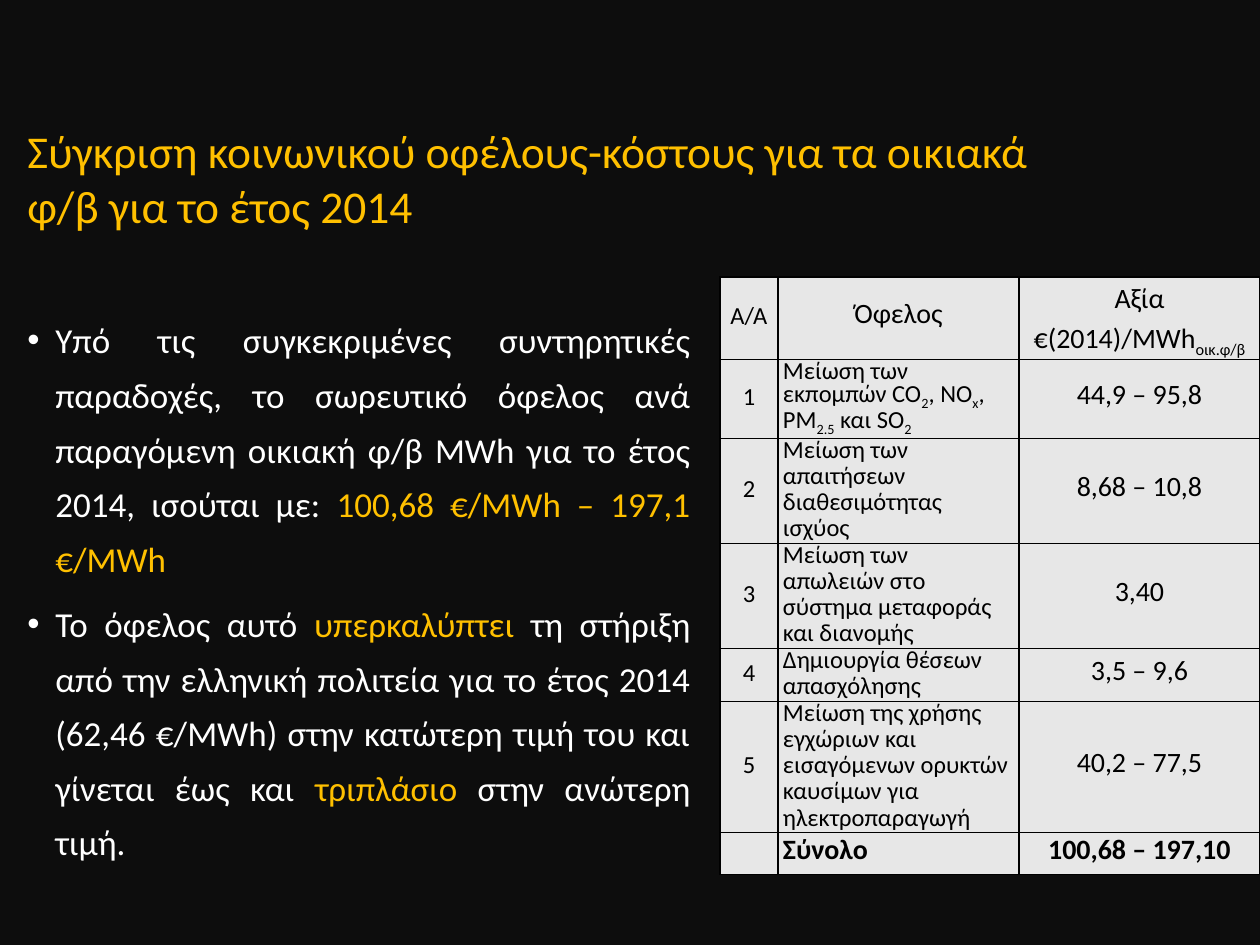
from lxml.etree import SubElement
from pptx import Presentation
from pptx.dml.color import RGBColor
from pptx.enum.text import MSO_ANCHOR, PP_ALIGN
from pptx.oxml.ns import qn
from pptx.util import Inches, Pt

PX = Inches(1) / 126
WHITE, BLACK, GOLD, GREY = "FFFFFF", "000000", "FFC000", "E7E7E7"


def px(count):
    return round(count * PX)


def write(paragraph, text, size, color, accent=None, bold=False, align=PP_ALIGN.LEFT,
          line=1.0, after=0):
    """Every second part between | marks takes the accent colour, or is subscript without one."""
    paragraph.alignment = align
    paragraph.line_spacing = line
    paragraph.space_after = Pt(after)
    for index, part in enumerate(text.split("|")):
        if not part:
            continue
        run = paragraph.add_run()
        run.text = part
        run.font.name = "Calibri"
        run.font.size = Pt(size)
        run.font.bold = bold
        marked = index % 2 == 1
        run.font.color.rgb = RGBColor.from_string(accent if marked and accent else color)
        if marked and not accent:
            run.font._element.set("baseline", "-25000")


presentation = Presentation()
presentation.slide_width, presentation.slide_height = px(1260), px(945)
slide = presentation.slides.add_slide(presentation.slide_layouts[6])
slide.background.fill.solid()
slide.background.fill.fore_color.rgb = RGBColor.from_string("0D0D0D")

title = slide.shapes.add_textbox(px(15), px(117), px(1082), px(123)).text_frame
title.word_wrap = True
write(title.paragraphs[0],
      "Σύγκριση κοινωνικού οφέλους-κόστους για τα οικιακά φ/β για το έτος 2014", 26, GOLD)

# Bulleted conclusions
conclusions = [
    "Υπό τις συγκεκριμένες συντηρητικές παραδοχές, το σωρευτικό όφελος ανά παραγόμενη "
    "οικιακή φ/β MWh για το έτος 2014, ισούται με: |100,68 €/MWh – 197,1 €/MWh|",
    "Το όφελος αυτό |υπερκαλύπτει| τη στήριξη από την ελληνική πολιτεία για το έτος 2014 "
    "(62,46 €/MWh) στην κατώτερη τιμή του και γίνεται έως και |τριπλάσιο| στην ανώτερη τιμή.",
]
body = slide.shapes.add_textbox(px(15), px(300), px(688), px(571)).text_frame
body.word_wrap = True
for index, text in enumerate(conclusions):
    paragraph = body.add_paragraph() if index else body.paragraphs[0]
    write(paragraph, text, 20, WHITE, accent=GOLD, align=PP_ALIGN.JUSTIFY, line=1.3, after=6)
    properties = paragraph._p.get_or_add_pPr()
    properties.set("marL", str(px(28)))
    properties.set("indent", str(-px(28)))
    SubElement(properties, qn("a:buFont"), typeface="Arial")
    SubElement(properties, qn("a:buChar"), char="•")

# Benefits table
rows = [
    ("A/A", "Όφελος", "Αξία\n€(2014)/MWh|οικ.φ/β|"),
    ("1", "Μείωση των εκπομπών CO|2|, NO|x|, PM|2.5| και SO|2|", "44,9 – 95,8"),
    ("2", "Μείωση των απαιτήσεων διαθεσιμότητας ισχύος", "8,68 – 10,8"),
    ("3", "Μείωση των απωλειών στο σύστημα μεταφοράς και διανομής", "3,40"),
    ("4", "Δημιουργία θέσεων απασχόλησης", "3,5 – 9,6"),
    ("5", "Μείωση της χρήσης εγχώριων και εισαγόμενων ορυκτών καυσίμων για ηλεκτροπαραγωγή",
     "40,2 – 77,5"),
    ("", "Σύνολο", "100,68 – 197,10"),
]
column_widths = [58, 241, 241]
row_heights = [58, 60, 81, 96, 53, 131, 42]
table = slide.shapes.add_table(len(rows), len(column_widths), px(720), px(277),
                               px(sum(column_widths)), px(sum(row_heights))).table
table.first_row = table.horz_banding = False
for column, width in zip(table.columns, column_widths):
    column.width = px(width)
for row, height in zip(table.rows, row_heights):
    row.height = px(height)

for row_index, row in enumerate(rows):
    header, total = row_index == 0, row_index == len(rows) - 1
    for column_index, text in enumerate(row):
        cell = table.cell(row_index, column_index)
        cell.vertical_anchor = MSO_ANCHOR.MIDDLE
        cell.margin_left = cell.margin_right = px(5)
        cell.margin_top = cell.margin_bottom = 0
        cell.fill.solid()
        cell.fill.fore_color.rgb = RGBColor.from_string(GREY)

        large = column_index == 2 or (column_index == 1 and (header or total))
        centred = header or column_index != 1
        lines = text.split("\n")
        for line_index, line_text in enumerate(lines):
            frame = cell.text_frame
            paragraph = frame.add_paragraph() if line_index else frame.paragraphs[0]
            spacing = (1.15, 0) if len(lines) > 1 else (Pt(15), 10)
            write(paragraph, line_text, 16 if large else 14, BLACK, bold=total,
                  align=PP_ALIGN.CENTER if centred else PP_ALIGN.LEFT,
                  line=spacing[0], after=spacing[1])

        cell_properties = cell._tc.get_or_add_tcPr()
        for position, side in enumerate(("lnL", "lnR", "lnT", "lnB")):
            border = SubElement(cell_properties, qn(f"a:{side}"), w=str(Pt(1)))
            border_fill = SubElement(border, qn("a:solidFill"))
            SubElement(border_fill, qn("a:srgbClr"), val=BLACK)
            cell_properties.insert(position, border)

presentation.save("out.pptx")
